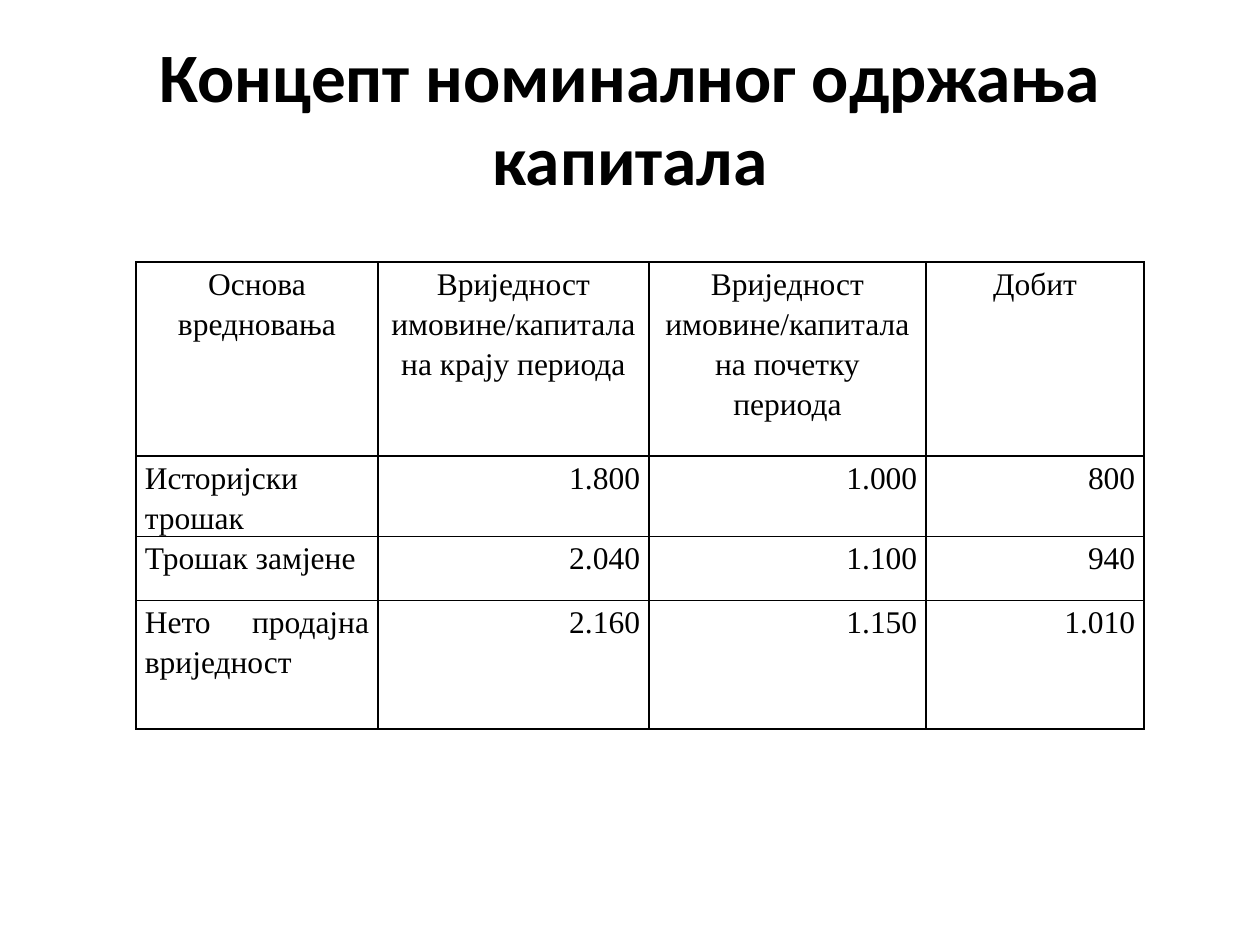
import pptx
import pptx.util
import pptx.dml.color
import pptx.enum.text
import pptx.oxml
import pptx.oxml.ns
from pptx.util import Inches

BLACK = pptx.dml.color.RGBColor(0, 0, 0)
ALIGN = pptx.enum.text.PP_ALIGN
ANCHOR = pptx.enum.text.MSO_ANCHOR
COLUMN_WIDTHS = [1.92, 2.15, 2.2, 1.73]
ROW_HEIGHTS = [1.54, 0.51, 0.51, 1.02]
ROWS = [
    ["Основа вредновања", "Вриједност имовине/капитала на крају периода",
     "Вриједност имовине/капитала на почетку периода", "Добит"],
    ["Историјски трошак", "1.800", "1.000", "800"],
    ["Трошак замјене", "2.040", "1.100", "940"],
    ["Нето продајна вриједност", "2.160", "1.150", "1.010"],
]


def add_run(p, text, font, size, bold=False):
    r = p.add_run()
    r.text = text
    r.font.name = font
    r.font.size = pptx.util.Pt(size)
    r.font.bold = bold
    r.font.color.rgb = BLACK


def add_borders(cell):
    tcPr = cell._tc.get_or_add_tcPr()
    for i, side in enumerate(["lnL", "lnR", "lnT", "lnB"]):
        tcPr.insert(i, pptx.oxml.parse_xml(
            f'<a:{side} {pptx.oxml.ns.nsdecls("a")} w="12700"><a:solidFill>'
            f'<a:srgbClr val="{BLACK}"/></a:solidFill></a:{side}>'))


prs = pptx.Presentation()
prs.slide_width = Inches(10)
prs.slide_height = Inches(7.5)
s = prs.slides.add_slide(prs.slide_layouts[5])

title = s.shapes.title
title.left, title.top = Inches(0.5), Inches(0.3)
title.width, title.height = Inches(9), Inches(1.25)
tf = title.text_frame
tf.word_wrap = True
tf.auto_size = pptx.enum.text.MSO_AUTO_SIZE.NONE
tf.vertical_anchor = ANCHOR.MIDDLE
p = tf.paragraphs[0]
p.alignment = ALIGN.CENTER
add_run(p, "Концепт номиналног одржања капитала", "Calibri", 39.6, True)

table = s.shapes.add_table(
    len(ROWS), len(COLUMN_WIDTHS), Inches(1.08), Inches(2.08),
    Inches(sum(COLUMN_WIDTHS)), Inches(sum(ROW_HEIGHTS))).table
table.first_row = False
table.horz_banding = False
for column, width in zip(table.columns, COLUMN_WIDTHS):
    column.width = Inches(width)
for row, height in zip(table.rows, ROW_HEIGHTS):
    row.height = Inches(height)

for i, texts in enumerate(ROWS):
    for j, text in enumerate(texts):
        cell = table.cell(i, j)
        cell.fill.background()
        cell.margin_left = cell.margin_right = Inches(0.07)
        cell.margin_top = cell.margin_bottom = 0
        cell.vertical_anchor = ANCHOR.TOP
        add_borders(cell)
        p = cell.text_frame.paragraphs[0]
        if i == 0:
            p.alignment = ALIGN.CENTER
        else:
            p.alignment = ALIGN.JUSTIFY if j == 0 else ALIGN.RIGHT
        p.line_spacing = 1.15
        p.space_after = pptx.util.Pt(6)
        add_run(p, text, "Times New Roman", 18)

prs.save("out.pptx")
